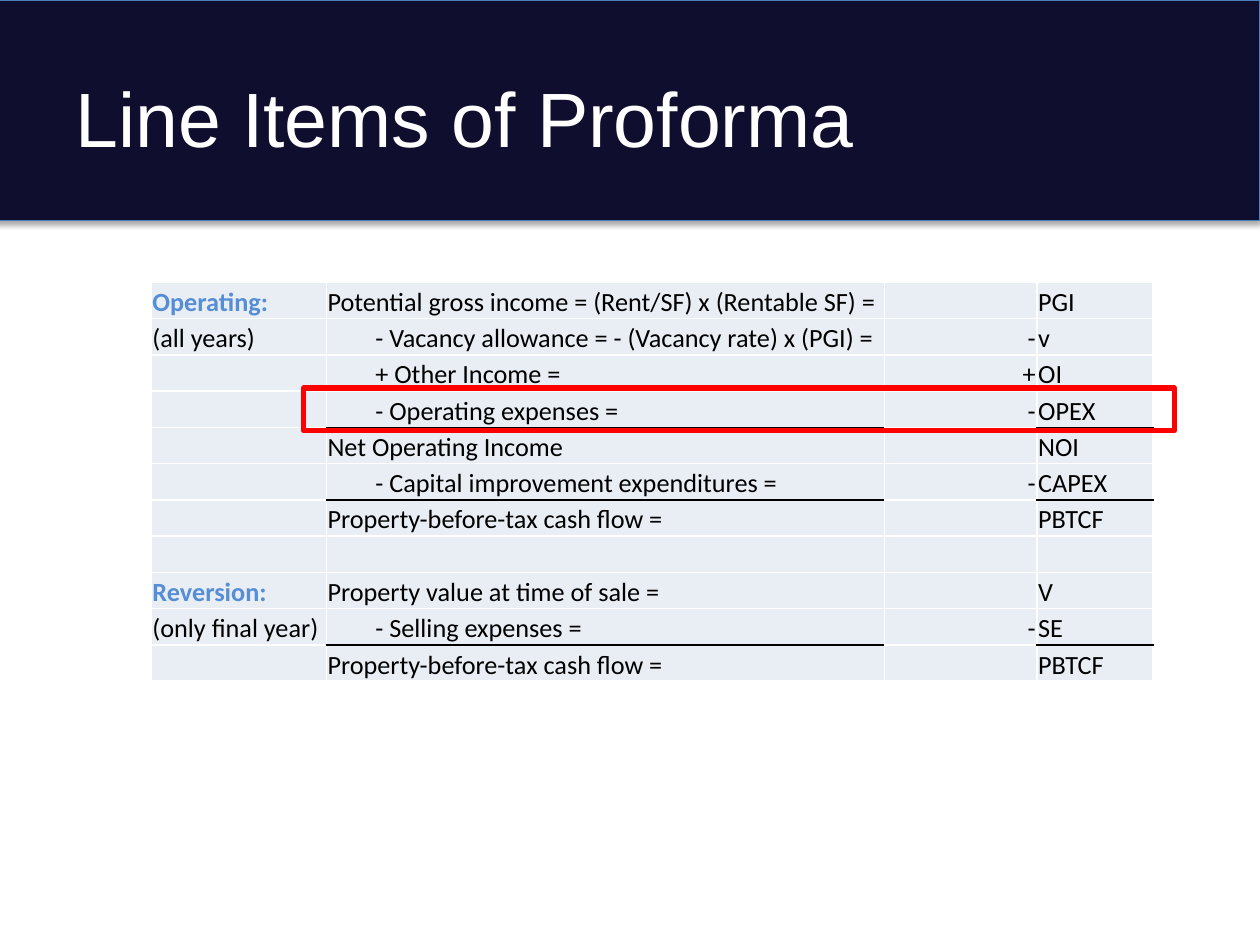
from pptx import Presentation
from pptx.dml.color import RGBColor
from pptx.enum.shapes import MSO_SHAPE
from pptx.enum.text import MSO_ANCHOR, PP_ALIGN
from pptx.oxml import parse_xml
from pptx.oxml.ns import nsdecls
from pptx.util import Inches, Pt

RECT = MSO_SHAPE.RECTANGLE
MIDDLE, BOTTOM = MSO_ANCHOR.MIDDLE, MSO_ANCHOR.BOTTOM
LEFT, RIGHT = PP_ALIGN.LEFT, PP_ALIGN.RIGHT

COLORS = {
    "navy": "100E2F",
    "edge": "4B7EBC",
    "white": "FFFFFF",
    "black": "000000",
    "head": "558ED5",
    "cell": "E9EDF4",
    "red": "FF0000",
}
COLS = [1.39, 4.43, 1.21, 0.92]
TALL = 3.17
PAD, INDENT = 0.01, 0.39
ITEMS = [
    ("Operating:", "Potential gross income = (Rent/SF) x (Rentable SF) =", "", "PGI"),
    ("(all years)", "- Vacancy allowance = - (Vacancy rate) x (PGI) =", "-", "v"),
    ("", "+ Other Income =", "+", "OI"),
    ("", "- Operating expenses =", "-", "OPEX"),
    ("", "Net Operating Income", "", "NOI"),
    ("", "- Capital improvement expenditures =", "-", "CAPEX"),
    ("", "Property-before-tax cash flow =", "", "PBTCF"),
    ("", "", "", ""),
    ("Reversion:", "Property value at time of sale =", "", "V"),
    ("(only final year)", "- Selling expenses =", "-", "SE"),
    ("", "Property-before-tax cash flow =", "", "PBTCF"),
]
TOTALS = {4, 6, 10}


def color(name):
    """Return the named colour."""
    return RGBColor.from_string(COLORS[name])


def write(frame, text, size=15, font="Calibri", tint="black", bold=False, align=LEFT):
    """Put one formatted line of text into a frame."""
    line = frame.paragraphs[0]
    line.alignment = align
    if not text:
        line._p.append(parse_xml(
            f'<a:endParaRPr {nsdecls("a")} sz="{size * 100}">'
            f'<a:latin typeface="{font}"/></a:endParaRPr>'
        ))
        return
    run = line.add_run()
    run.text = text
    run.font.size = Pt(size)
    run.font.name = font
    run.font.bold = bold
    run.font.color.rgb = color(tint)


class Deck:
    """Hold the style and the current slide."""

    def __init__(self):
        """Start a deck with one blank slide."""
        self.show = Presentation()
        self.show.slide_width = Inches(10)
        self.show.slide_height = Inches(7.5)
        self.slide = self.show.slides.add_slide(self.show.slide_layouts[6])

    def box(self, area, edge, width, fill=None):
        """Add a rectangle, filled or hollow."""
        shape = self.slide.shapes.add_shape(RECT, *map(Inches, area))
        shape.shadow.inherit = False
        if fill:
            shape.fill.solid()
            shape.fill.fore_color.rgb = color(fill)
        else:
            shape.fill.background()
        shape.line.color.rgb = color(edge)
        shape.line.width = Pt(width)
        return shape

    def shade(self, shape):
        """Give a shape a soft shadow below it."""
        shadow = parse_xml(
            f'<a:outerShdw {nsdecls("a")} blurRad="40000" dist="23000" '
            f'dir="5400000" rotWithShape="0"><a:srgbClr val="{COLORS["black"]}">'
            '<a:alpha val="35000"/></a:srgbClr></a:outerShdw>'
        )
        shape.element.spPr.find("{*}effectLst").append(shadow)

    def title(self, text, area):
        """Add the slide title."""
        frame = self.slide.shapes.add_textbox(*map(Inches, area)).text_frame
        frame.word_wrap = True
        frame.vertical_anchor = MIDDLE
        write(frame, text, size=44, font="Arial", tint="white")

    def border(self, cell, top, bottom):
        """Draw the four borders of a cell."""
        sides = {"lnL": "white", "lnR": "white", "lnT": top, "lnB": bottom}
        for side, tint in sides.items():
            cell._tc.get_or_add_tcPr().append(parse_xml(
                f'<a:{side} {nsdecls("a")} w="12700"><a:solidFill>'
                f'<a:srgbClr val="{COLORS[tint]}"/></a:solidFill></a:{side}>'
            ))

    def cell(self, cell, text, row, col):
        """Style and fill one table cell."""
        ruled = col in (1, 3)
        top = "black" if ruled and row in TOTALS else "white"
        bottom = "black" if ruled and row + 1 in TOTALS else "white"
        self.border(cell, top, bottom)
        cell.fill.solid()
        cell.fill.fore_color.rgb = color("cell")
        inset = col == 1 and text.startswith(("-", "+"))
        cell.margin_left = Inches(INDENT if inset else PAD)
        cell.margin_right = cell.margin_top = Inches(PAD)
        cell.margin_bottom = 0
        cell.vertical_anchor = BOTTOM
        head = col == 0 and text.endswith(":")
        write(cell.text_frame, text, tint="head" if head else "black", bold=head,
              align=RIGHT if col == 2 else LEFT)

    def table(self, items, left, top):
        """Add the table of line items."""
        area = (left, top, sum(COLS), TALL)
        table = self.slide.shapes.add_table(
            len(items), len(COLS), *map(Inches, area)).table
        table.first_row = table.horz_banding = False
        for col, width in enumerate(COLS):
            table.columns[col].width = Inches(width)
        for row, texts in enumerate(items):
            table.rows[row].height = Inches(TALL / len(items))
            for col, text in enumerate(texts):
                self.cell(table.cell(row, col), text, row, col)


def main():
    """Build the slide and save it."""
    deck = Deck()
    band = deck.box((-0.04, 0, 10.04, 1.75), "edge", 0.75, fill="navy")
    deck.shade(band)
    deck.title("Line Items of Proforma", (0.5, 0.3, 9, 1.25))
    deck.table(ITEMS, 1.2, 2.24)
    deck.box((2.41, 3.08, 6.91, 0.34), "red", 3)
    deck.show.save("out.pptx")


if __name__ == "__main__":
    main()
